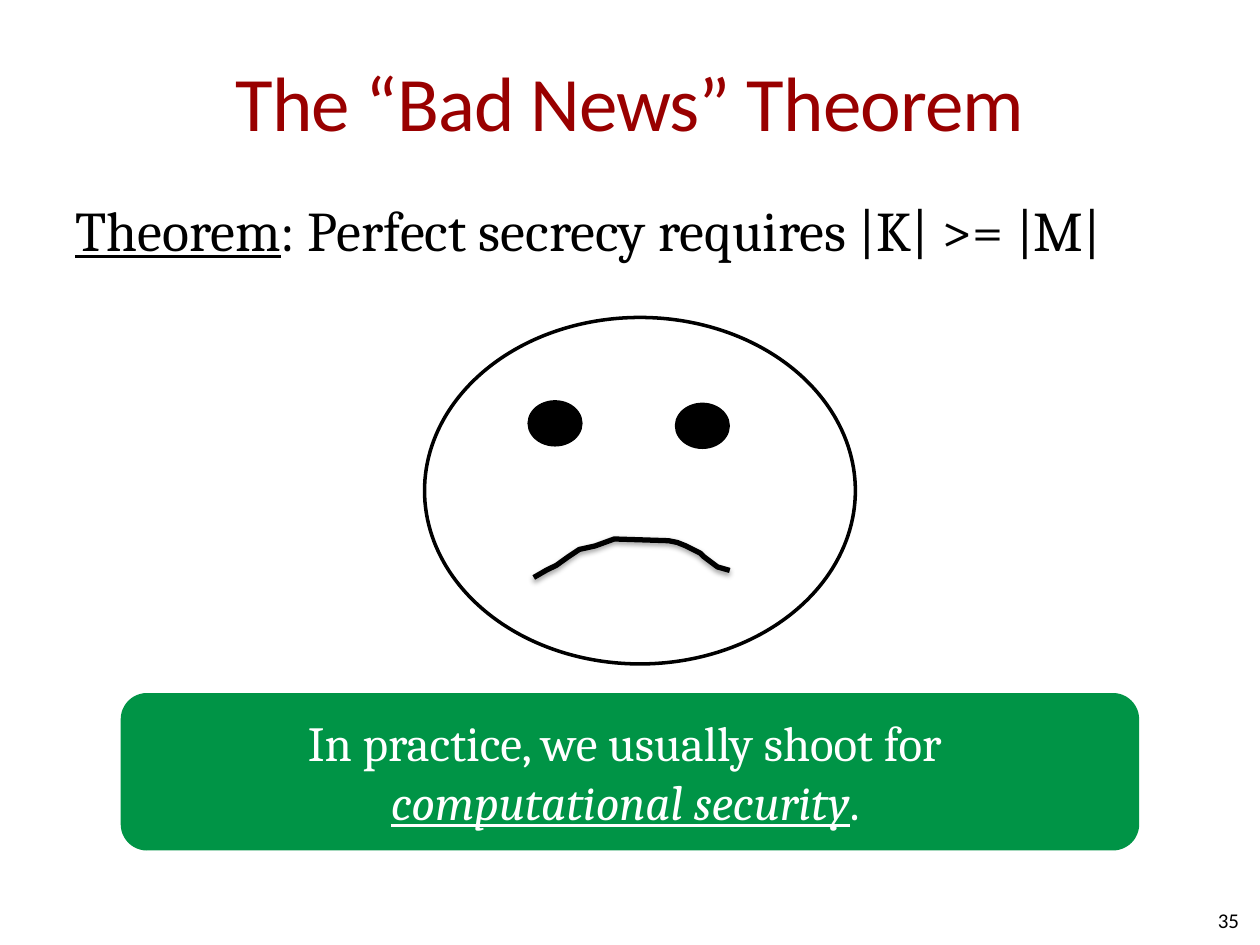
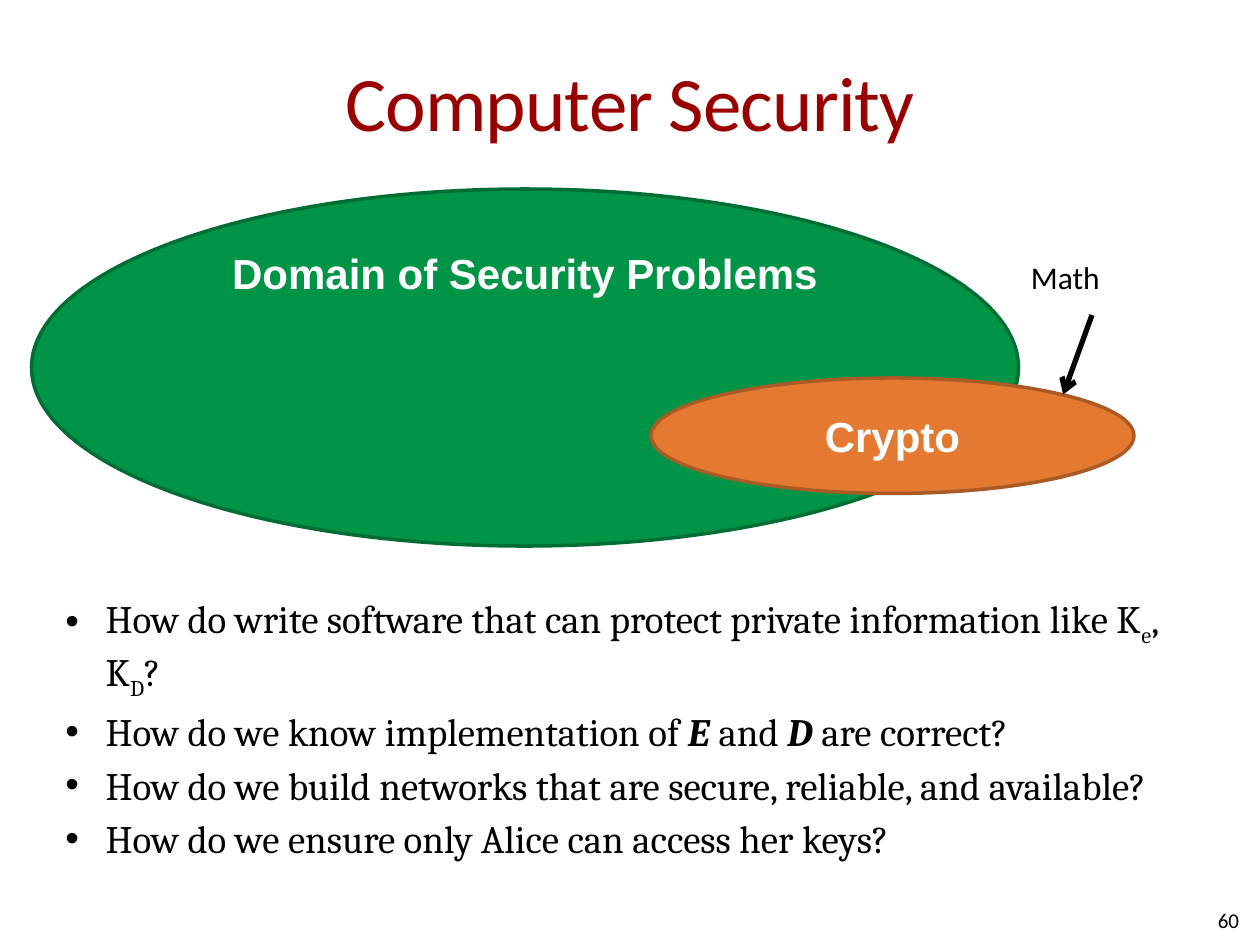
from dataclasses import dataclass

import pptx
import pptx.dml.color
import pptx.enum.shapes
import pptx.enum.text
import pptx.oxml
import pptx.oxml.ns
import pptx.presentation
import pptx.shapes.autoshape
import pptx.slide
import pptx.text.text
import pptx.util
from lxml import etree

Pt = pptx.util.Pt
qn = pptx.oxml.ns.qn
Align = pptx.enum.text.PP_ALIGN
Anchor = pptx.enum.text.MSO_ANCHOR
Preset = pptx.enum.shapes.MSO_SHAPE

COLORS = {
    "title": "990000",
    "ink": "000000",
    "paper": "FFFFFF",
    "green": "009446",
    "green_edge": "006D34",
    "orange": "E47932",
    "orange_edge": "A95A25",
}


@dataclass(frozen=True)
class Box:
    left: float
    top: float
    width: float
    height: float

    def lengths(self) -> tuple[int, int, int, int]:
        return Pt(self.left), Pt(self.top), Pt(self.width), Pt(self.height)


@dataclass(frozen=True)
class Style:
    font: str
    size: float
    color: str = "ink"
    align: Align = Align.LEFT
    anchor: Anchor = Anchor.TOP
    bold: bool = False
    margins: tuple[float, float] = (7.2, 3.6)
    wrap: bool = True


@dataclass(frozen=True)
class Span:
    text: str
    bold: bool = False
    italic: bool = False
    underline: bool = False
    baseline: int = 0


@dataclass(frozen=True)
class Figure:
    preset: Preset
    box: Box
    fill: str
    edge: str | None = None


TITLE = Style("Calibri", 44, "title", Align.CENTER, Anchor.MIDDLE, margins=(0, 3.6))
PAGE_NUMBER = Style("Calibri", 12, align=Align.RIGHT, anchor=Anchor.MIDDLE, margins=(0, 0))
THEOREM = Style("Cambria", 32)
QUESTION = Style("Cambria", 22.2)
ADVICE = Style("Cambria", 28, "paper", Align.CENTER, Anchor.MIDDLE, margins=(0, 0))
DOMAIN = Style("Arial", 24, "paper", Align.CENTER, bold=True, wrap=False)
CRYPTO = Style("Arial", 24, "paper", Align.CENTER, Anchor.MIDDLE, bold=True, wrap=False)
NOTE = Style("Calibri", 18, wrap=False)

TITLE_BOX = Box(36, 12.24, 648, 90)
PAGE_NUMBER_BOX = Box(540, 511.2, 168, 28.8)
EDGE_WIDTH = 2
BULLET_INDENT = 23
BULLET_GAP = 4

FACE = [
    Figure(Preset.OVAL, Box(242.6, 181.4, 246.2, 198), "paper", "ink"),
    Figure(Preset.OVAL, Box(302.4, 229.7, 29.5, 24.5), "ink", "ink"),
    Figure(Preset.OVAL, Box(386.6, 231.1, 29.5, 24.5), "ink", "ink"),
]
MOUTH = [
    (305.3, 329.8), (311.8, 326.2), (318.2, 322.6), (324.7, 317.5), (327.6, 316.1),
    (331.2, 313.9), (339.8, 311.8), (351.4, 308.2), (382.3, 308.9), (386.6, 310.3),
    (391.7, 311.8), (399.6, 316.1), (402.5, 317.5), (410.4, 324), (416.9, 326.2),
]
QUESTIONS = [
    [
        Span("How do write software that can protect private information like K"),
        Span("e", baseline=-25),
        Span(", K"),
        Span("D", baseline=-25),
        Span("?"),
    ],
    [
        Span("How do we know implementation of "),
        Span("E ", bold=True, italic=True),
        Span("and "),
        Span("D", bold=True, italic=True),
        Span(" are correct?"),
    ],
    [Span("How do we build networks that are secure, reliable, and available?")],
    [Span("How do we ensure only Alice can access her keys?")],
]


def rgb(name: str) -> pptx.dml.color.RGBColor:
    return pptx.dml.color.RGBColor.from_string(COLORS[name])


def format_run(run: pptx.text.text._Run, span: Span, style: Style) -> None:
    font = run.font
    font.name = style.font
    font.size = Pt(style.size)
    font.color.rgb = rgb(style.color)
    font.bold = style.bold or span.bold
    font.italic = span.italic
    font.underline = span.underline
    if span.baseline:
        font._element.set("baseline", str(span.baseline * 1000))


def write(frame: pptx.text.text.TextFrame, paragraphs: list[list[Span]], style: Style) -> None:
    frame.word_wrap = style.wrap
    frame.vertical_anchor = style.anchor
    frame.margin_left = frame.margin_right = Pt(style.margins[0])
    frame.margin_top = frame.margin_bottom = Pt(style.margins[1])
    frame.text = "\n".join(spans[0].text for spans in paragraphs)
    for paragraph, spans in zip(frame.paragraphs, paragraphs):
        paragraph.alignment = style.align
        paragraph.font.size = Pt(style.size)
        for span in spans[1:]:
            paragraph.add_run().text = span.text
        for run, span in zip(paragraph.runs, spans):
            format_run(run, span, style)


def add_text(
    slide: pptx.slide.Slide, box: Box, paragraphs: list[list[Span]], style: Style
) -> pptx.text.text.TextFrame:
    frame = slide.shapes.add_textbox(*box.lengths()).text_frame
    write(frame, paragraphs, style)
    return frame


def add_figure(slide: pptx.slide.Slide, figure: Figure) -> pptx.shapes.autoshape.Shape:
    shape = slide.shapes.add_shape(figure.preset, *figure.box.lengths())
    shape.shadow.inherit = False
    shape.fill.solid()
    shape.fill.fore_color.rgb = rgb(figure.fill)
    if figure.edge:
        shape.line.color.rgb = rgb(figure.edge)
        shape.line.width = Pt(EDGE_WIDTH)
    else:
        shape.line.fill.background()
    return shape


def add_mouth(slide: pptx.slide.Slide) -> None:
    builder = slide.shapes.build_freeform(*MOUTH[0], scale=Pt(1))
    builder.add_line_segments(MOUTH[1:], close=False)
    mouth = builder.convert_to_shape()
    mouth.fill.background()
    mouth.line.color.rgb = rgb("ink")
    mouth.line.width = Pt(3)
    mouth.shadow.inherit = False
    effects = mouth._element.spPr.find(qn("a:effectLst"))
    shadow = etree.SubElement(
        effects, qn("a:outerShdw"),
        blurRad=str(Pt(3.1)), dist=str(Pt(1.6)), dir="5400000", rotWithShape="0",
    )
    tint = etree.SubElement(shadow, qn("a:srgbClr"), val=COLORS["ink"])
    etree.SubElement(tint, qn("a:alpha"), val="38000")


def add_arrow(
    slide: pptx.slide.Slide, start: tuple[float, float], end: tuple[float, float]
) -> None:
    arrow = slide.shapes.add_connector(
        pptx.enum.shapes.MSO_CONNECTOR.STRAIGHT, *map(Pt, start + end)
    )
    arrow.line.color.rgb = rgb("ink")
    arrow.line.width = Pt(3)
    etree.SubElement(arrow.line._get_or_add_ln(), qn("a:tailEnd"), type="arrow")
    etree.SubElement(arrow._element.spPr, qn("a:effectLst"))


def add_bullets(frame: pptx.text.text.TextFrame) -> None:
    for index, paragraph in enumerate(frame.paragraphs):
        paragraph.space_before = Pt(BULLET_GAP if index else 0)
        properties = paragraph._p.get_or_add_pPr()
        properties.set("marL", str(Pt(BULLET_INDENT)))
        properties.set("indent", str(-Pt(BULLET_INDENT)))
        color = etree.Element(qn("a:buClr"))
        etree.SubElement(color, qn("a:srgbClr"), val=COLORS["ink"])
        font = etree.Element(qn("a:buFont"), typeface="Arial")
        mark = etree.Element(qn("a:buChar"), char="•")
        defaults = properties.find(qn("a:defRPr"))
        for part in (color, font, mark):
            defaults.addprevious(part)


def add_slide(
    deck: pptx.presentation.Presentation, title: str, number: int
) -> pptx.slide.Slide:
    slide = deck.slides.add_slide(deck.slide_layouts[6])
    heading = add_text(slide, TITLE_BOX, [[Span(title)]], TITLE)
    heading.paragraphs[0].runs[0].font._element.set("spc", "-50")
    add_text(slide, PAGE_NUMBER_BOX, [[Span(str(number))]], PAGE_NUMBER)
    return slide


def build_theorem(deck: pptx.presentation.Presentation) -> None:
    slide = add_slide(deck, "The “Bad News” Theorem", 35)
    theorem = [Span("Theorem", underline=True), Span(": Perfect secrecy requires |K| >= |M|")]
    add_text(slide, Box(36, 108, 648, 144), [theorem], THEOREM)
    for part in FACE:
        add_figure(slide, part)
    add_mouth(slide)
    advice = add_figure(slide, Figure(Preset.ROUNDED_RECTANGLE, Box(69, 396, 582, 90), "green"))
    write(
        advice.text_frame,
        [[
            Span("In practice, we usually shoot for \v"),
            Span("computational security", italic=True, underline=True),
            Span(". "),
        ]],
        ADVICE,
    )


def build_security(deck: pptx.presentation.Presentation) -> None:
    slide = add_slide(deck, "Computer Security", 60)
    questions = add_text(slide, Box(30.24, 336.24, 668.88, 154), QUESTIONS, QUESTION)
    add_bullets(questions)
    domain = add_figure(slide, Figure(Preset.OVAL, Box(18, 108, 564, 204), "green", "green_edge"))
    write(domain.text_frame, [[Span("Domain of Security Problems")]], DOMAIN)
    crypto = add_figure(slide, Figure(Preset.OVAL, Box(372, 216, 276, 66), "orange", "orange_edge"))
    write(crypto.text_frame, [[Span("Crypto")]], CRYPTO)
    add_arrow(slide, (624, 180), (607.5, 225.5))
    add_text(slide, Box(582, 144, 90, 42), [[Span("Math")]], NOTE)


def main() -> None:
    deck = pptx.Presentation()
    deck.slide_width = Pt(720)
    deck.slide_height = Pt(540)
    build_theorem(deck)
    build_security(deck)
    deck.save("out.pptx")


if __name__ == "__main__":
    main()
